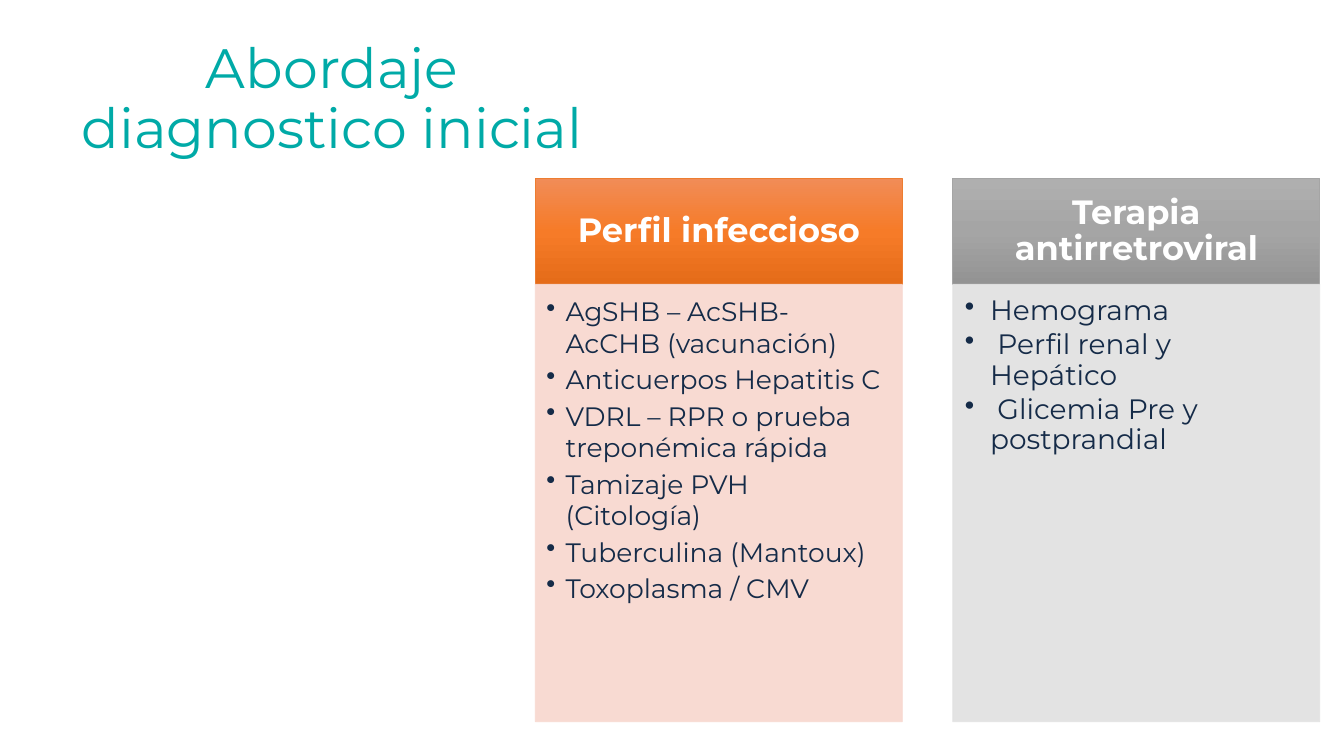
from copy import deepcopy

from pptx import Presentation
from pptx.dml.color import RGBColor
from pptx.enum.shapes import MSO_SHAPE
from pptx.enum.text import MSO_ANCHOR, MSO_AUTO_SIZE, PP_ALIGN
from pptx.oxml.ns import qn
from pptx.util import Inches, Pt

RECT = MSO_SHAPE.RECTANGLE
TOP, MIDDLE = MSO_ANCHOR.TOP, MSO_ANCHOR.MIDDLE
LEFT, CENTER = PP_ALIGN.LEFT, PP_ALIGN.CENTER
NO_FIT = MSO_AUTO_SIZE.NONE
FONT = "Montserrat"
COLORS = {
    "title": "00AAA7", "heading": "FFFFFF", "body": "152B48",
    "orange_top": "F18C57", "orange_mid": "F67B28", "orange_end": "E56C19",
    "orange_line": "ED7D31", "orange_body": "F8D7CE",
    "gray_top": "AFAFAF", "gray_mid": "A5A5A5", "gray_end": "939393",
    "gray_line": "A5A5A5", "gray_body": "E1E1E1",
}
COLUMN_TOP, COLUMN_WIDTH = 1.77, 3.64
HEADER_HEIGHT, BODY_HEIGHT = 1.05, 4.34
COLUMNS = [
    {"left": 5.31, "hue": "orange", "heading": "Perfil infeccioso",
     "size": 19, "indent": 0.19, "spacing": 1.0, "inset": 0.11,
     "items": ["AgSHB – AcSHB- AcCHB (vacunación)", "Anticuerpos Hepatitis C",
               "VDRL – RPR o prueba treponémica rápida",
               "Tamizaje PVH (Citología)", "Tuberculina (Mantoux)",
               "Toxoplasma / CMV"]},
    {"left": 9.45, "hue": "gray", "heading": "Terapia antirretroviral",
     "size": 20, "indent": 0.25, "spacing": 0.9, "inset": 0.12,
     "items": ["Hemograma", " Perfil renal y Hepático",
               " Glicemia Pre y postprandial"]},
]


def rgb(name):
    return RGBColor.from_string(COLORS[name])


def set_frame(tf, anchor, insets):
    tf.word_wrap = True
    tf.auto_size = NO_FIT
    tf.vertical_anchor = anchor
    tf.margin_left, tf.margin_top, tf.margin_right, tf.margin_bottom = map(Inches, insets)


def write(p, text, size, color, align, spacing, bold=False):
    p.alignment = align
    p.line_spacing = spacing
    r = p.add_run()
    r.text = text
    r.font.name = FONT
    r.font.size = Pt(size)
    r.font.bold = bold
    r.font.color.rgb = rgb(color)


def add_bullet(p, indent):
    pPr = p._p.get_or_add_pPr()
    pPr.set("marL", str(Inches(indent)))
    pPr.set("indent", str(-Inches(indent)))
    bullet = pPr.makeelement(qn("a:buChar"), {"char": "•"})
    pPr.append(bullet)


def add_panel(s, left, top, height, line):
    sp = s.shapes.add_shape(RECT, Inches(left), Inches(top),
                            Inches(COLUMN_WIDTH), Inches(height))
    sp.shadow.inherit = False
    sp.line.color.rgb = rgb(line)
    sp.line.width = Pt(0.5)
    return sp


def fill_gradient(sp, names):
    sp.fill.gradient()
    sp.fill.gradient_angle = 270
    stops = sp._element.spPr.find(".//" + qn("a:gsLst"))
    stops.append(deepcopy(stops[0]))
    for i, (stop, name) in enumerate(zip(sp.fill.gradient_stops, names)):
        stop.position = i / 2
        stop.color.rgb = rgb(name)


def fill_translucent(sp, name, percent):
    sp.fill.solid()
    sp.fill.fore_color.rgb = rgb(name)
    for clr in sp._element.spPr.iter(qn("a:srgbClr")):
        clr.append(clr.makeelement(qn("a:alpha"), {"val": str(percent * 1000)}))


def add_header(s, column):
    hue = column["hue"]
    sp = add_panel(s, column["left"], COLUMN_TOP, HEADER_HEIGHT, f"{hue}_line")
    fill_gradient(sp, [f"{hue}_{part}" for part in ("top", "mid", "end")])
    set_frame(sp.text_frame, MIDDLE, (0.19, 0.11, 0.19, 0.11))
    write(sp.text_frame.paragraphs[0], column["heading"], 24, "heading", CENTER, 0.9, True)


def add_list(s, column):
    color = f"{column['hue']}_body"
    inset = column["inset"]
    sp = add_panel(s, column["left"], COLUMN_TOP + HEADER_HEIGHT, BODY_HEIGHT, color)
    fill_translucent(sp, color, 90)
    tf = sp.text_frame
    set_frame(tf, TOP, (inset, inset, inset + 0.04, 0.17))
    for i, item in enumerate(column["items"]):
        p = tf.add_paragraph() if i else tf.paragraphs[0]
        add_bullet(p, column["indent"])
        p.space_after = Pt(3)
        write(p, item, column["size"], "body", LEFT, column["spacing"])


def add_title(s, text):
    sp = s.shapes.title
    sp.left, sp.top, sp.width, sp.height = map(Inches, (0.67, 0.27, 5.25, 1.45))
    set_frame(sp.text_frame, MIDDLE, (0.1, 0.05, 0.1, 0.05))
    write(sp.text_frame.paragraphs[0], text, 39.6, "title", CENTER, 0.9)


def main():
    prs = Presentation()
    prs.slide_width, prs.slide_height = Inches(13.33), Inches(7.5)
    s = prs.slides.add_slide(prs.slide_layouts[5])
    add_title(s, "Abordaje diagnostico inicial")
    for column in COLUMNS:
        add_header(s, column)
        add_list(s, column)
    prs.save("out.pptx")


if __name__ == "__main__":
    main()
